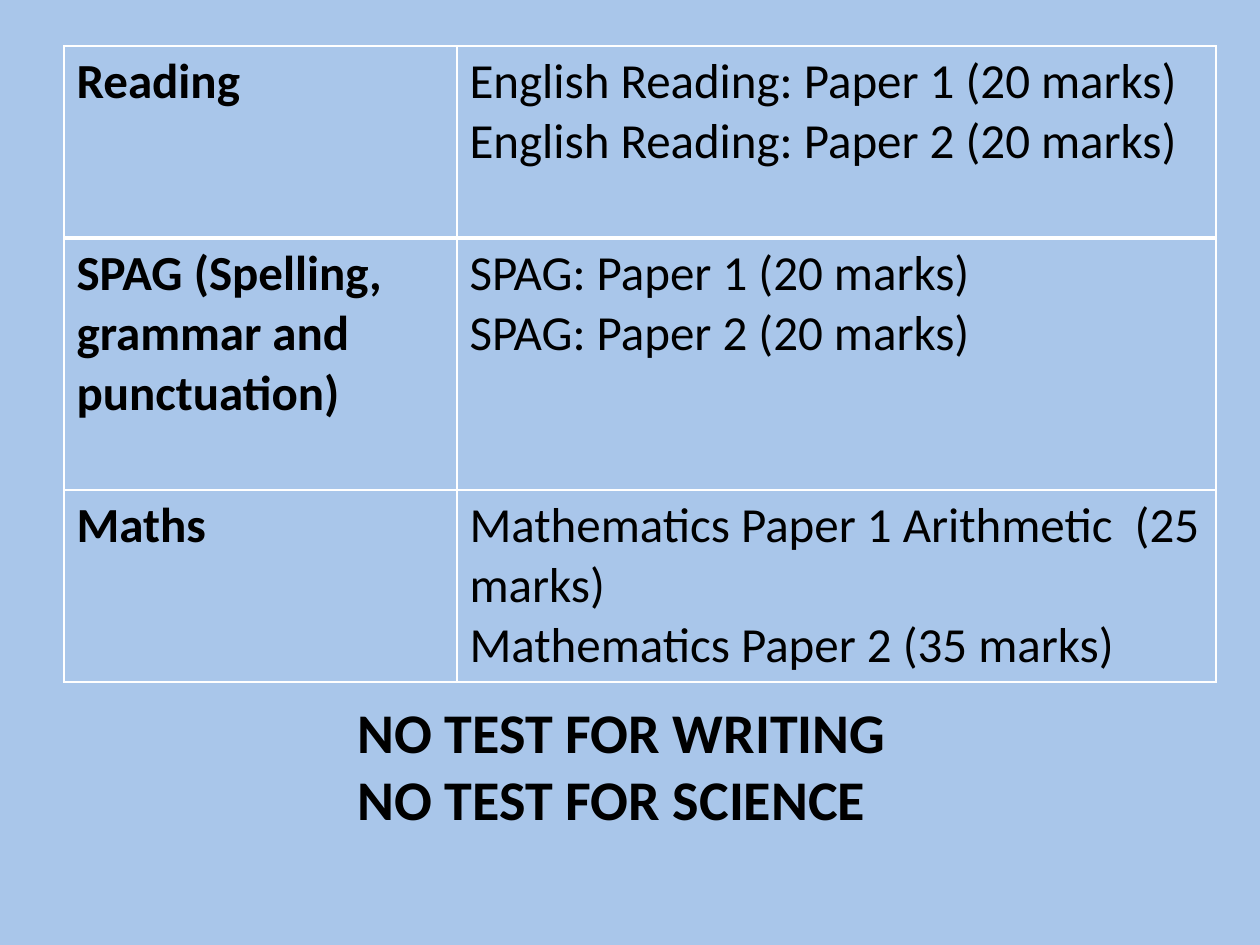
from dataclasses import dataclass

from lxml import etree
from pptx import Presentation
from pptx.dml.color import RGBColor
from pptx.enum.text import MSO_AUTO_SIZE
from pptx.oxml.ns import qn
from pptx.util import Emu, Pt

FIT_SHAPE = MSO_AUTO_SIZE.SHAPE_TO_FIT_TEXT
EMU_PER_PX = 914400 / 126
BLANK_LAYOUT = 6


@dataclass(frozen=True)
class Theme:
    font: str = "Calibri"
    background: str = "A9C6EA"
    ink: str = "000000"
    border: str = "FFFFFF"
    table_size: int = 28
    notice_size: int = 32
    thin_line: int = 1
    thick_line: int = 3


THEME = Theme()

TESTS = [
    ("Reading", ["English Reading: Paper 1 (20 marks)",
                 "English Reading: Paper 2 (20 marks)"]),
    ("SPAG (Spelling, grammar and punctuation)", ["SPAG: Paper 1 (20 marks)",
                                                "SPAG: Paper 2 (20 marks)"]),
    ("Maths", ["Mathematics Paper 1 Arithmetic  (25 marks)",
               "Mathematics Paper 2 (35 marks)"]),
]
NOTICE = ["NO TEST FOR WRITING", "NO TEST FOR SCIENCE"]
COLUMN_WIDTHS = [393, 759]
ROW_HEIGHTS = [192, 252, 192]


def px(length):
    return Emu(round(length * EMU_PER_PX))


def write_lines(frame, lines, size, bold):
    frame.text = "\n".join(lines)
    for paragraph in frame.paragraphs:
        font = paragraph.font
        font.name = THEME.font
        font.size = Pt(size)
        font.bold = bold
        font.color.rgb = RGBColor.from_string(THEME.ink)


def add_borders(cell, top, bottom):
    properties = cell._tc.get_or_add_tcPr()
    widths = {"L": THEME.thin_line, "R": THEME.thin_line, "T": top, "B": bottom}
    for side, width in widths.items():
        line = etree.SubElement(properties, qn(f"a:ln{side}"), w=str(Pt(width)))
        fill = etree.SubElement(line, qn("a:solidFill"))
        etree.SubElement(fill, qn("a:srgbClr"), val=THEME.border)


def add_test_table(slide, left, top):
    table = slide.shapes.add_table(
        len(TESTS), len(COLUMN_WIDTHS), px(left), px(top),
        px(sum(COLUMN_WIDTHS)), px(sum(ROW_HEIGHTS))).table
    table.first_row = table.horz_banding = False
    for column, width in zip(table.columns, COLUMN_WIDTHS):
        column.width = px(width)
    for row, height in zip(table.rows, ROW_HEIGHTS):
        row.height = px(height)

    # A thick rule separates the first subject from the others
    rules = [THEME.thin_line, THEME.thick_line, THEME.thin_line, THEME.thin_line]
    for index, (subject, papers) in enumerate(TESTS):
        for column, lines in enumerate([[subject], papers]):
            cell = table.cell(index, column)
            write_lines(cell.text_frame, lines, THEME.table_size, column == 0)
            add_borders(cell, rules[index], rules[index + 1])
            cell.fill.background()


def add_notice(slide, left, top, width, height):
    frame = slide.shapes.add_textbox(
        px(left), px(top), px(width), px(height)).text_frame
    frame.word_wrap = False
    frame.auto_size = FIT_SHAPE
    write_lines(frame, NOTICE, THEME.notice_size, True)


def main():
    presentation = Presentation()
    presentation.slide_width = px(1260)
    presentation.slide_height = px(945)
    slide = presentation.slides.add_slide(presentation.slide_layouts[BLANK_LAYOUT])

    # Background
    backdrop = slide.background.fill
    backdrop.solid()
    backdrop.fore_color.rgb = RGBColor.from_string(THEME.background)

    # Papers by subject, then the subjects without a test
    add_test_table(slide, 64, 46)
    add_notice(slide, 345, 691, 559, 149)
    presentation.save("out.pptx")


if __name__ == "__main__":
    main()
